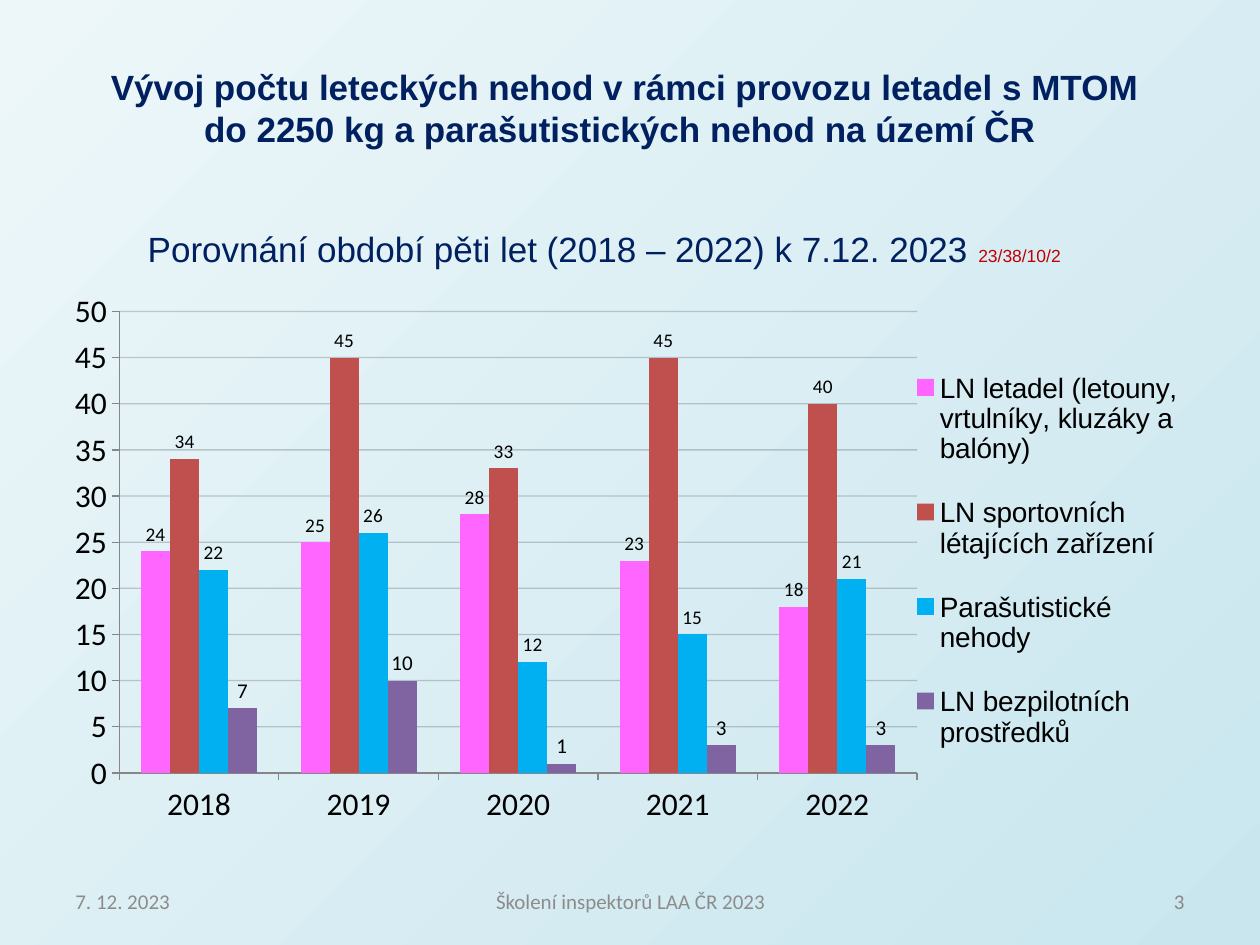
from dataclasses import dataclass

from pptx import Presentation
from pptx.chart.data import CategoryChartData
from pptx.dml.color import RGBColor
from pptx.enum.chart import XL_CHART_TYPE, XL_LABEL_POSITION, XL_LEGEND_POSITION, XL_TICK_MARK
from pptx.enum.text import MSO_ANCHOR, PP_ALIGN
from pptx.oxml import parse_xml
from pptx.oxml.ns import nsdecls, qn
from pptx.util import Inches, Pt

COLUMN = XL_CHART_TYPE.COLUMN_CLUSTERED
ABOVE = XL_LABEL_POSITION.OUTSIDE_END
RIGHT_KEY = XL_LEGEND_POSITION.RIGHT
OUTSIDE = XL_TICK_MARK.OUTSIDE
TOP, MIDDLE = MSO_ANCHOR.TOP, MSO_ANCHOR.MIDDLE
LEFT, CENTER, RIGHT = PP_ALIGN.LEFT, PP_ALIGN.CENTER, PP_ALIGN.RIGHT

BLACK = RGBColor(0x00, 0x00, 0x00)
GRAY = RGBColor(0x8C, 0x8C, 0x8C)
MID = RGBColor(0x89, 0x89, 0x89)
AXIS = RGBColor(0x86, 0x86, 0x86)
NAVY = RGBColor(0x00, 0x20, 0x60)
RED = RGBColor(0xC0, 0x00, 0x00)
PINK = RGBColor(0xFF, 0x66, 0xFF)
BRICK = RGBColor(0xC0, 0x50, 0x4D)
SKY = RGBColor(0x00, 0xB0, 0xF0)
PURPLE = RGBColor(0x80, 0x64, 0xA2)
PALE = RGBColor(0xED, 0xF7, 0xF9)
AQUA = RGBColor(0xC9, 0xE6, 0xEE)

YEARS = ["2018", "2019", "2020", "2021", "2022"]


@dataclass
class Series:
    name: str
    vals: tuple
    color: RGBColor
    size: int = 11


@dataclass
class Run:
    text: str
    size: int
    color: RGBColor


SERIES = [
    Series("LN letadel (letouny, vrtulníky, kluzáky a balóny)", (24, 25, 28, 23, 18), PINK),
    Series("LN sportovních létajících zařízení", (34, 45, 33, 45, 40), BRICK),
    Series("Parašutistické nehody", (22, 26, 12, 15, 21), SKY),
    Series("LN bezpilotních prostředků", (7, 10, 1, 3, 3), PURPLE, 12),
]


def add_text(slide, box: tuple, *runs: Run, font: str = "Arial", bold: bool = False,
             align=CENTER, anchor=TOP, wrap: bool = True) -> None:
    frame = slide.shapes.add_textbox(*map(Inches, box)).text_frame
    frame.word_wrap = wrap
    frame.vertical_anchor = anchor
    para = frame.paragraphs[0]
    para.alignment = align
    for item in runs:
        for row, line in enumerate(item.text.split("\n")):
            if row:
                para.add_line_break()
            run = para.add_run()
            run.text = line
            run.font.name = font
            run.font.size = Pt(item.size)
            run.font.bold = bold
            run.font.color.rgb = item.color


def set_font(font, size: int, name: str = "Calibri") -> None:
    font.name = name
    font.size = Pt(size)
    font.color.rgb = BLACK


def set_layout(parent, index: int, inner: bool, box: tuple) -> None:
    for old in parent.findall(qn("c:layout")):
        parent.remove(old)
    target = '<c:layoutTarget val="inner"/>' if inner else ""
    modes = '<c:xMode val="edge"/><c:yMode val="edge"/>'
    sizes = "".join(f'<c:{key} val="{val}"/>' for key, val in zip("xywh", box))
    parent.insert(index, parse_xml(
        f'<c:layout {nsdecls("c")}><c:manualLayout>{target}{modes}{sizes}'
        "</c:manualLayout></c:layout>"))


def style_axis(axis) -> None:
    axis.major_tick_mark = OUTSIDE
    axis.format.line.color.rgb = AXIS
    axis.format.line.width = Pt(0.75)
    set_font(axis.tick_labels.font, 18)


def add_grid(axis) -> None:
    axis.has_major_gridlines = True
    line = axis.major_gridlines.format.line
    line.color.rgb = BLACK
    line.width = Pt(0.75)
    color = axis.major_gridlines._xAx.find(".//" + qn("c:majorGridlines")).find(
        ".//" + qn("a:srgbClr"))
    color.append(parse_xml(f'<a:alpha {nsdecls("a")} val="19000"/>'))


def add_columns(slide, box: tuple) -> None:
    data = CategoryChartData()
    data.categories = YEARS
    for item in SERIES:
        data.add_series(item.name, item.vals)
    chart = slide.shapes.add_chart(COLUMN, *map(Inches, box), data).chart
    chart.has_title = False
    set_font(chart.font, 18)
    chart.has_legend = True
    chart.legend.position = RIGHT_KEY
    chart.legend.include_in_layout = False
    set_font(chart.legend.font, 16, "Arial")
    set_layout(chart.legend._element, 1, False, (0.75, 0.1, 0.24, 0.79))
    set_layout(chart._chartSpace.chart.plotArea, 0, True, (0.057, 0.05, 0.699, 0.825))
    style_axis(chart.category_axis)
    style_axis(chart.value_axis)
    chart.value_axis.minimum_scale = 0
    chart.value_axis.maximum_scale = 50
    chart.value_axis.major_unit = 5
    add_grid(chart.value_axis)
    plot = chart.plots[0]
    plot.gap_width = 150
    plot.overlap = 0
    plot.vary_by_categories = False
    for bars, item in zip(plot.series, SERIES):
        bars.format.fill.solid()
        bars.format.fill.fore_color.rgb = item.color
        bars.invert_if_negative = False
        labels = bars.data_labels
        labels.show_value = True
        labels.position = ABOVE
        set_font(labels.font, item.size)


def main() -> None:
    """Build the accident statistics slide."""
    deck = Presentation()
    deck.slide_width, deck.slide_height = Inches(10), Inches(7.5)
    slide = deck.slides.add_slide(deck.slide_layouts[6])
    fill = slide.background.fill
    fill.gradient()
    fill.gradient_angle = 315
    for stop, color in zip(fill.gradient_stops, (PALE, AQUA)):
        stop.color.rgb = color

    add_columns(slide, (0.43, 2.25, 9.06, 4.44))
    add_text(slide, (0.55, 0.47, 8.82, 0.77),
             Run("Vývoj počtu leteckých nehod v rámci provozu letadel s MTOM\n"
                 "do 2250 kg a parašutistických nehod na území ČR ", 20, NAVY), bold=True)
    add_text(slide, (1.05, 1.76, 7.49, 0.44),
             Run("Porovnání období pěti let (2018 – 2022) k 7.12. 2023 ", 20, NAVY),
             Run("23/38/10/2", 10, RED), wrap=False)
    for left, width, text, color, align in (
            (0.5, 2.33, "7. 12. 2023", GRAY, LEFT),
            (3.42, 3.17, "Školení inspektorů LAA ČR 2023", GRAY, CENTER),
            (7.17, 2.33, "3", MID, RIGHT)):
        add_text(slide, (left, 6.95, width, 0.4), Run(text, 12, color),
                 font="Calibri", align=align, anchor=MIDDLE)
    deck.save("out.pptx")


if __name__ == "__main__":
    main()
